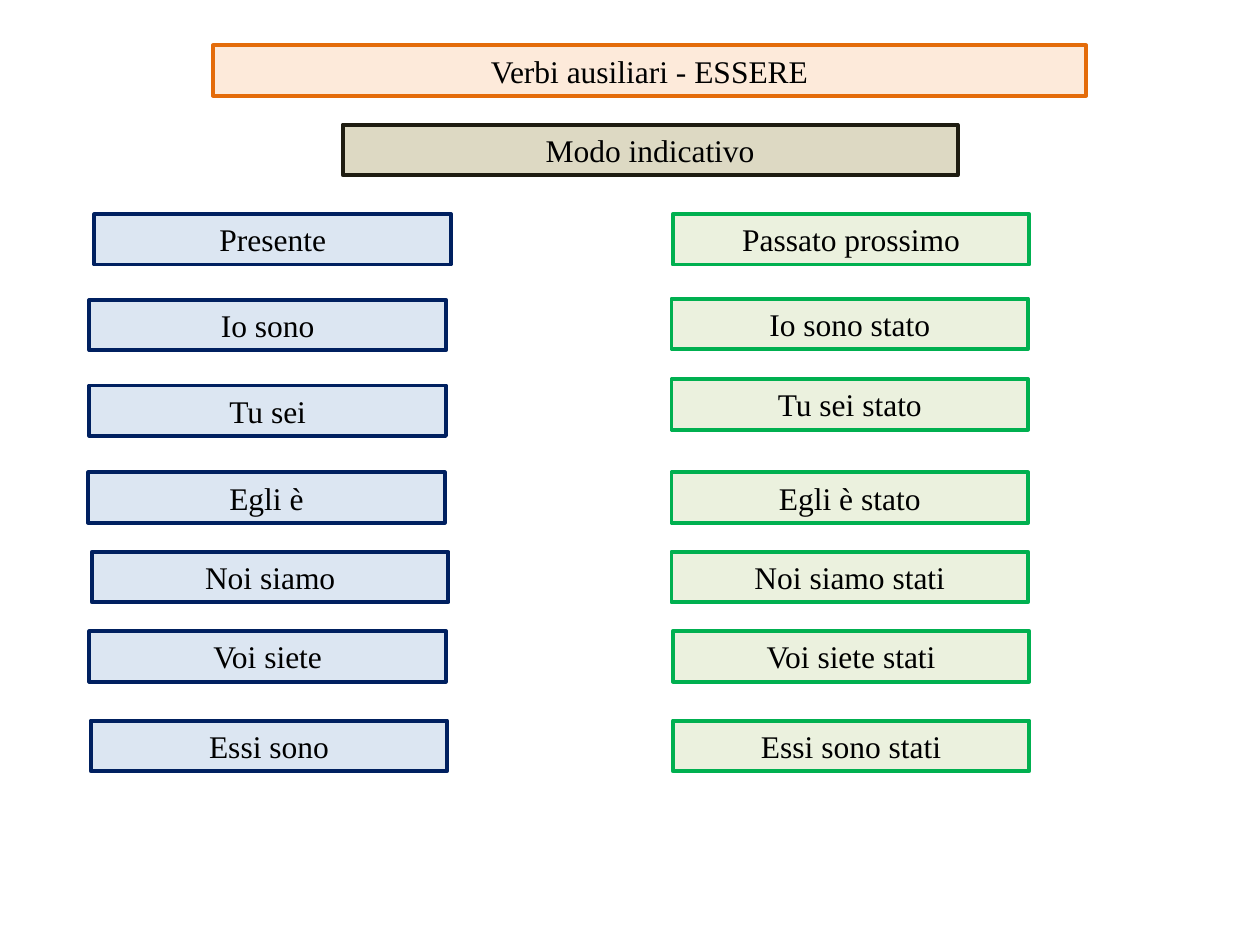
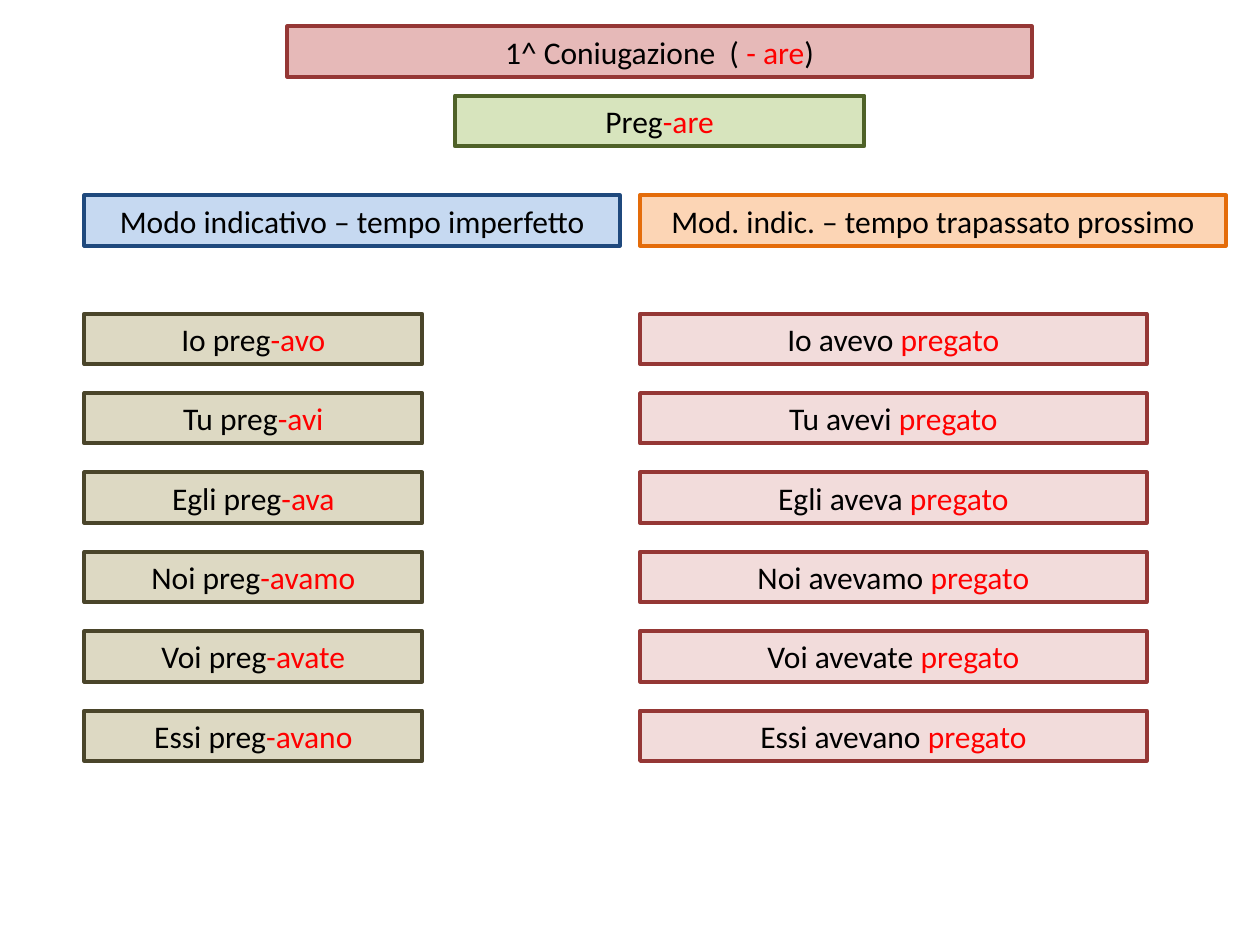
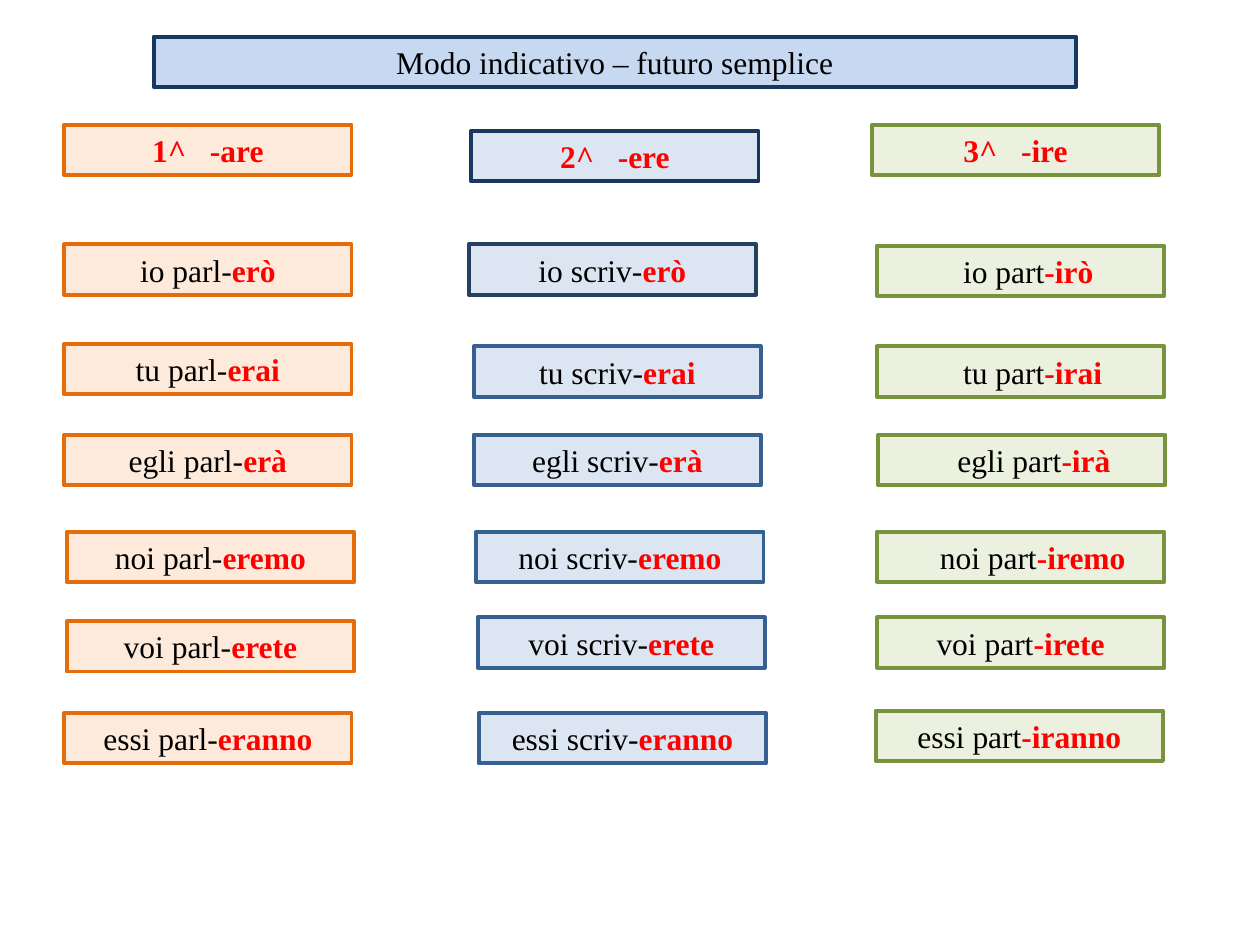
from pptx import Presentation
from pptx.dml.color import RGBColor
from pptx.enum import shapes, text
from pptx.util import Inches, Pt

# Colours
BLACK = RGBColor(0x00, 0x00, 0x00)
RED = RGBColor(0xFF, 0x00, 0x00)
PEACH = RGBColor(0xFD, 0xEA, 0xDA)
APRICOT = RGBColor(0xFC, 0xD5, 0xB5)
ORANGE = RGBColor(0xE4, 0x6C, 0x0A)
SAND = RGBColor(0xDD, 0xD9, 0xC3)
SOOT = RGBColor(0x1E, 0x1C, 0x11)
BROWN = RGBColor(0x4A, 0x45, 0x2A)
ICE = RGBColor(0xDC, 0xE6, 0xF2)
SKY = RGBColor(0xC6, 0xD9, 0xF1)
NAVY = RGBColor(0x00, 0x20, 0x60)
BLUE = RGBColor(0x1F, 0x49, 0x7D)
INK = RGBColor(0x17, 0x37, 0x5E)
SLATE = RGBColor(0x25, 0x40, 0x61)
STEEL = RGBColor(0x37, 0x60, 0x92)
MINT = RGBColor(0xEB, 0xF1, 0xDE)
LIME = RGBColor(0xD7, 0xE4, 0xBD)
GREEN = RGBColor(0x00, 0xB0, 0x50)
MOSS = RGBColor(0x4F, 0x62, 0x28)
OLIVE = RGBColor(0x77, 0x93, 0x3C)
ROSE = RGBColor(0xE6, 0xB9, 0xB8)
BLUSH = RGBColor(0xF2, 0xDC, 0xDB)
WINE = RGBColor(0x95, 0x37, 0x35)

SERIF, SANS = "Times New Roman", "Calibri"
HIGH = 0.4      # height of every box
PAD = 0.1       # side inset of every box


def rows(left, top, step, labels):
    """Place labels in one column at equal steps."""
    return [(label, left, top + i * step) for i, label in enumerate(labels)]


# Content: a bar "|" switches between plain and marked text.
# Group: fill, line, width, cells (label, left, top, optional indent).
# The first group of each slide is its title.
ESSERE = [
    (PEACH, ORANGE, 6.93, [("Verbi ausiliari - ESSERE", 1.69, 0.36)]),
    (SAND, SOOT, 4.88, [("Modo indicativo", 2.72, 0.99)]),
    (ICE, NAVY, 2.83, [
        ("Presente", 0.75, 1.7), ("Io sono", 0.71, 2.38),
        ("Tu sei", 0.71, 3.06), ("Egli è", 0.7, 3.75),
        ("Noi siamo", 0.73, 4.38), ("Voi siete", 0.71, 5.01),
        ("Essi sono", 0.72, 5.72)]),
    (MINT, GREEN, 2.83, [
        ("Passato prossimo", 5.34, 1.7), ("Io sono stato", 5.33, 2.37),
        ("Tu sei stato", 5.33, 3.01), ("Egli è stato", 5.33, 3.75),
        ("Noi siamo stati", 5.33, 4.38), ("Voi siete stati", 5.34, 5.01),
        ("Essi sono stati", 5.34, 5.72)]),
]

PREGARE = [
    (ROSE, WINE, 5.91, [("1^ Coniugazione  ( |- are|)", 2.28, 0.21)]),
    (LIME, MOSS, 3.25, [("Preg|-are", 3.61, 0.76)]),
    (SKY, BLUE, 4.25, [("Modo indicativo – tempo imperfetto", 0.67, 1.55)]),
    (APRICOT, ORANGE, 4.65,
     [("Mod. indic. – tempo trapassato prossimo", 5.08, 1.55)]),
    (SAND, BROWN, 2.68, rows(0.67, 2.49, 0.63, [
        "Io preg|-avo", "Tu preg|-avi", "Egli preg|-ava",
        "Noi preg|-avamo", "Voi preg|-avate", "Essi preg|-avano"])),
    (BLUSH, WINE, 4.02, rows(5.08, 2.49, 0.63, [
        f"{who} |pregato" for who in (
            "Io avevo", "Tu avevi", "Egli aveva",
            "Noi avevamo", "Voi avevate", "Essi avevano")])),
]

FUTURO = [
    (SKY, INK, 7.32, [("Modo indicativo – futuro semplice", 1.22, 0.29)]),
    (PEACH, ORANGE, 2.28, [
        ("|1^   -are", 0.51, 0.99), ("io parl-|erò", 0.51, 1.94),
        ("tu parl-|erai", 0.51, 2.73), ("egli parl-|erà", 0.51, 3.45),
        ("noi parl-|eremo", 0.53, 4.22), ("voi parl-|erete", 0.53, 4.93),
        ("essi parl-|eranno", 0.51, 5.66)]),
    (ICE, INK, 2.28, [("|2^   -ere", 3.74, 1.04)]),
    (ICE, SLATE, 2.28, [("io scriv-|erò", 3.72, 1.94)]),
    (ICE, STEEL, 2.28, [
        ("tu scriv-|erai", 3.76, 2.75), ("egli scriv-|erà", 3.76, 3.45),
        ("noi scriv-|eremo", 3.78, 4.22), ("voi scriv-|erete", 3.79, 4.9),
        ("essi scriv-|eranno", 3.8, 5.66)]),
    (MINT, OLIVE, 2.28, [
        ("|3^   -ire", 6.92, 0.99), ("io part|-irò", 6.96, 1.95, 0.12),
        ("tu part|-irai", 6.96, 2.75, 0.19),
        ("egli part|-irà", 6.97, 3.45, 0.19),
        ("noi part|-iremo", 6.96, 4.22, 0.19),
        ("voi part|-irete", 6.96, 4.9), ("essi part|-iranno", 6.95, 5.64)]),
]

# Slide: groups, font, whether marked text is bold
SLIDES = [(ESSERE, SERIF, False), (PREGARE, SANS, False),
          (FUTURO, SERIF, True)]


def write(frame, label, font, bold, indent):
    """Fill a box with centred text, marked parts in red."""
    frame.word_wrap = True
    frame.auto_size = text.MSO_AUTO_SIZE.NONE
    frame.vertical_anchor = text.MSO_ANCHOR.MIDDLE
    frame.margin_left, frame.margin_right = Inches(PAD + indent), Inches(PAD)
    frame.margin_top = frame.margin_bottom = Inches(0.05)
    para = frame.paragraphs[0]
    para.alignment = text.PP_ALIGN.CENTER
    for i, part in enumerate(label.split("|")):
        if not part:
            continue
        marked = i % 2 == 1
        run = para.add_run()
        run.text = part
        run.font.name, run.font.size = font, Pt(18)
        run.font.bold = marked and bold
        run.font.color.rgb = RED if marked else BLACK


def dress(box, fill, line):
    box.fill.solid()
    box.fill.fore_color.rgb = fill
    box.line.color.rgb = line
    box.line.width = Pt(2.25)


def draw(slide, groups, font, bold):
    """Draw every box; the first one is the slide's title."""
    for n, (fill, line, width, cells) in enumerate(groups):
        for label, left, top, *indent in cells:
            area = [Inches(v) for v in (left, top, width, HIGH)]
            if n == 0:
                box = slide.shapes.title
                box.left, box.top, box.width, box.height = area
            else:
                box = slide.shapes.add_shape(
                    shapes.MSO_SHAPE.RECTANGLE, *area)
                box.shadow.inherit = False
            dress(box, fill, line)
            write(box.text_frame, label, font, bold, sum(indent))


def main():
    deck = Presentation()
    deck.slide_width, deck.slide_height = Inches(10), Inches(7.5)
    for groups, font, bold in SLIDES:
        draw(deck.slides.add_slide(deck.slide_layouts[5]), groups, font, bold)
    deck.save("out.pptx")


if __name__ == "__main__":
    main()
